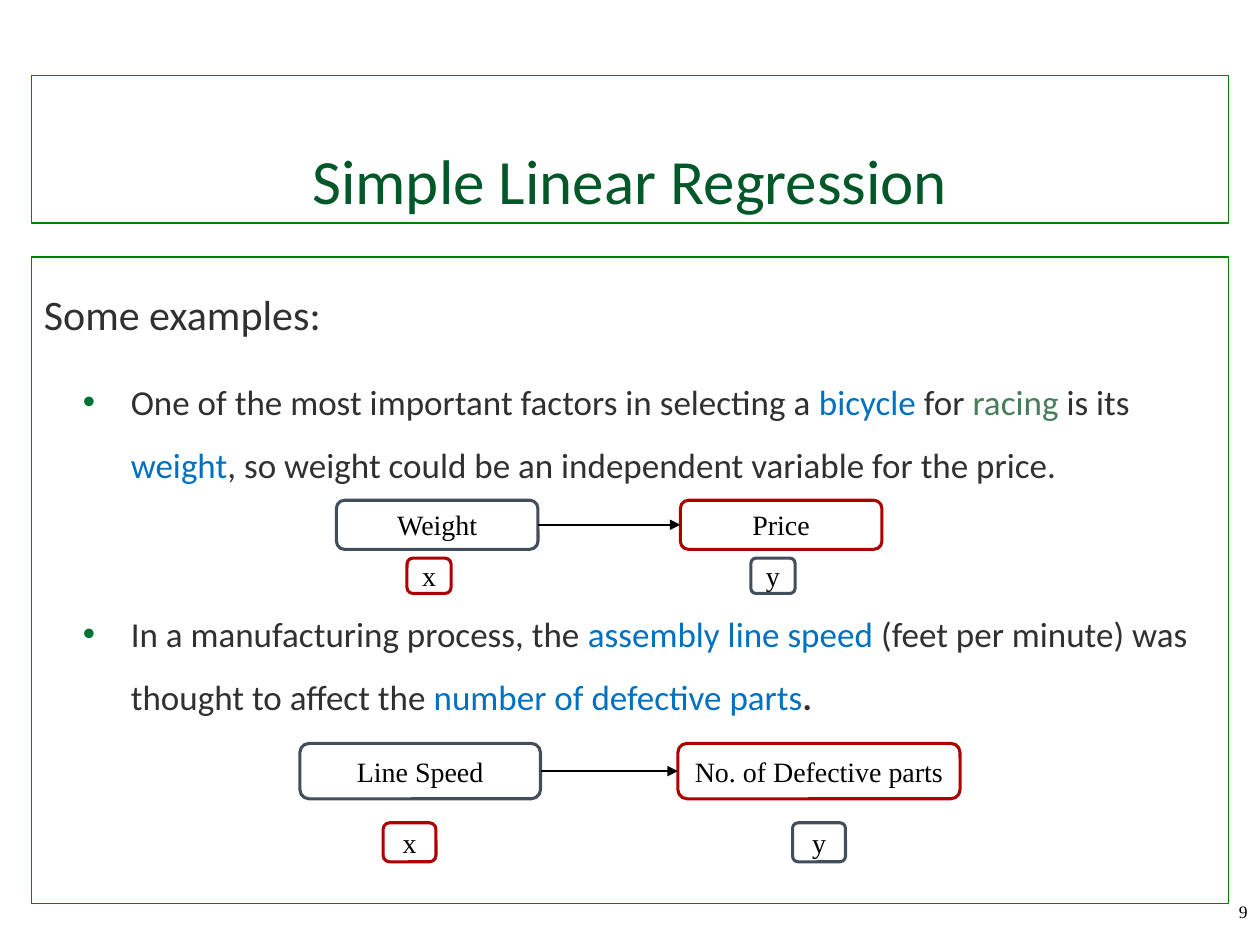
from lxml import etree
from pptx import Presentation
from pptx.dml.color import RGBColor
from pptx.enum.shapes import MSO_CONNECTOR, MSO_SHAPE
from pptx.enum.text import MSO_ANCHOR, PP_ALIGN
from pptx.oxml.ns import qn
from pptx.util import Inches, Pt

RECTANGLE, ROUNDED = MSO_SHAPE.RECTANGLE, MSO_SHAPE.ROUNDED_RECTANGLE
STRAIGHT = MSO_CONNECTOR.STRAIGHT
TOP, MIDDLE, BOTTOM = MSO_ANCHOR.TOP, MSO_ANCHOR.MIDDLE, MSO_ANCHOR.BOTTOM
LEFT, CENTER, RIGHT = PP_ALIGN.LEFT, PP_ALIGN.CENTER, PP_ALIGN.RIGHT
COLUMNS, ROWS = 100, 75
WIDTH, HEIGHT = Inches(10), Inches(7.5)
SANS, SERIF = "Calibri", "Times New Roman"
BLACK, WHITE, INK, BLUE = "000000", "FFFFFF", "303030", "0070C0"
FRAME, TITLE, RACING, BULLET = "008200", "005828", "477D59", "007033"
SLATE, RED = "424E5B", "AD0101"

EXAMPLES = [
    (6, [("One of the most important factors in selecting a ", INK), ("bicycle ", BLUE),
         ("for ", INK), ("racing ", RACING), ("is its ", INK), ("weight", BLUE),
         (", so weight could be an independent variable for the price.", INK)]),
    (54.5, [("In a manufacturing process, the ", INK), ("assembly line speed ", BLUE),
            ("(feet per minute) was thought to affect the ", INK),
            ("number of defective parts", BLUE), (".", INK, True)]),
]
DIAGRAMS = [
    {"top": 39.7, "height": 3.9, "badge_top": 44.3, "badge_size": (3.5, 2.8),
     "nodes": [("Weight", 26.7, 16, 32.3), ("Price", 54, 16, 59.6)]},
    {"top": 59, "height": 4.4, "badge_top": 65.3, "badge_size": (4.2, 3.1),
     "nodes": [("Line Speed", 23.8, 19.1, 30.4), ("No. of Defective parts", 53.8, 22.4, 62.9)]},
]


def color(value):
    """Turn a hex string into a colour."""
    return RGBColor.from_string(value)


def place(column, row):
    """Turn a grid position or size into slide lengths."""
    return int(WIDTH * column / COLUMNS), int(HEIGHT * row / ROWS)


def apply(target, values):
    """Set each named attribute on the target."""
    for name, value in values.items():
        setattr(target, name, value)


def add_span(para, text, size, ink, font=SANS, bold=False):
    """Append one formatted run to a paragraph."""
    span = para.add_run()
    span.text = text
    apply(span.font, {"name": font, "size": Pt(size), "bold": bold})
    span.font.color.rgb = color(ink)


def add_box(shapes, kind, corner, size, outline, weight, anchor, fill=None):
    """Draw an outlined box and return it."""
    box = shapes.add_shape(kind, *place(*corner), *place(*size))
    box.shadow.inherit = False
    if fill:
        box.fill.solid()
        box.fill.fore_color.rgb = color(fill)
    else:
        box.fill.background()
    box.line.color.rgb = color(outline)
    box.line.width = Pt(weight)
    apply(box.text_frame, {"word_wrap": True, "vertical_anchor": anchor})
    return box


def add_label(box, text, size, ink, font, alignment=CENTER):
    """Write a single line into a box."""
    para = box.text_frame.paragraphs[0]
    para.alignment = alignment
    add_span(para, text, size, ink, font)


def add_node(shapes, text, corner, size, outline):
    """Draw a rounded diagram box with its label."""
    box = add_box(shapes, ROUNDED, corner, size, outline, 1.75, MIDDLE, WHITE)
    add_label(box, text, 16, BLACK, SERIF)
    return box


def add_arrow(shapes, start, end):
    """Draw a straight arrow between two grid points."""
    arrow = shapes.add_connector(STRAIGHT, *place(*start), *place(*end))
    arrow.line.color.rgb = color(BLACK)
    arrow.line.width = Pt(1.25)
    etree.SubElement(arrow.line._get_or_add_ln(), qn("a:tailEnd"), type="triangle")
    etree.SubElement(arrow._element.spPr, qn("a:effectLst"))


def add_diagram(page, top, height, badge_top, badge_size, nodes):
    """Draw the cause box, the effect box, their badges and the arrow."""
    shapes = page.shapes.add_group_shape().shapes
    styles = [("x", SLATE, RED), ("y", RED, SLATE)]
    for (text, left, width, badge_left), (letter, outline, accent) in zip(nodes, styles):
        add_node(shapes, text, (left, top), (width, height), outline)
        badge = add_node(shapes, letter, (badge_left, badge_top), badge_size, accent)
        if letter == "y":
            badge.adjustments[0] = 0.14
    cause, effect = nodes
    middle = top + height / 2
    add_arrow(shapes, (cause[1] + cause[2], middle), (effect[1], middle))


def add_bullet(para):
    """Give a paragraph a hanging round bullet."""
    properties = para._p.get_or_add_pPr()
    properties.set("marL", str(Inches(0.69)))
    properties.set("indent", str(Inches(-0.38)))
    tint = etree.SubElement(properties, qn("a:buClr"))
    etree.SubElement(tint, qn("a:srgbClr"), val=BULLET)
    etree.SubElement(properties, qn("a:buFont"), typeface="Arial")
    etree.SubElement(properties, qn("a:buChar"), char="•")


def add_body(page):
    """Draw the framed text with its two examples."""
    frame = add_box(page.shapes, RECTANGLE, (2.5, 20.4), (95, 51.3), FRAME, 0.75, TOP).text_frame
    layout = {"alignment": LEFT, "line_spacing": 1.5, "space_after": Pt(6)}
    heading = frame.paragraphs[0]
    apply(heading, layout)
    add_span(heading, "Some examples:", 24, INK)
    for gap, spans in EXAMPLES:
        para = frame.add_paragraph()
        apply(para, {**layout, "space_before": Pt(gap)})
        add_bullet(para)
        for text, ink, *bold in spans:
            add_span(para, text, 20, ink, bold=bool(bold))


def main():
    """Build the slide and save it."""
    deck = Presentation()
    apply(deck, {"slide_width": WIDTH, "slide_height": HEIGHT})
    page = deck.slides.add_slide(deck.slide_layouts[6])
    title = add_box(page.shapes, RECTANGLE, (2.5, 6), (95, 11.7), FRAME, 0.75, BOTTOM)
    add_label(title, "Simple Linear Regression", 36, TITLE, SANS)
    add_body(page)
    number = page.shapes.add_textbox(*place(91.7, 71), *place(8.3, 4))
    number.text_frame.word_wrap = True
    add_label(number, "9", 10, BLACK, SERIF, RIGHT)
    for diagram in DIAGRAMS:
        add_diagram(page, **diagram)
    deck.save("out.pptx")


if __name__ == "__main__":
    main()
